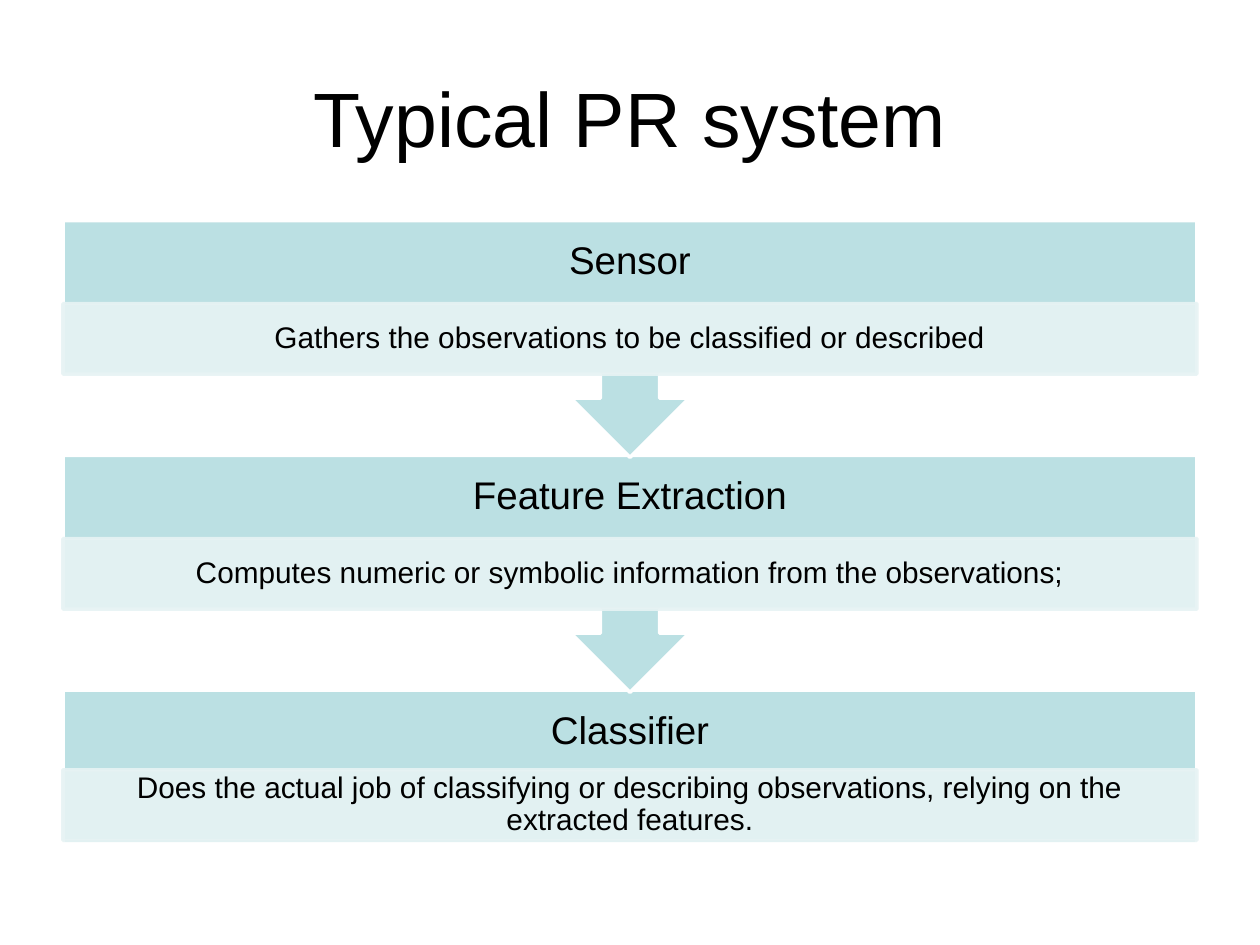
from dataclasses import dataclass

import pptx
import pptx.dml.color
import pptx.enum.shapes
import pptx.enum.text
import pptx.util
from lxml import etree
from pptx.oxml.ns import qn

Inches = pptx.util.Inches
Pt = pptx.util.Pt
SHAPE = pptx.enum.shapes.MSO_SHAPE


@dataclass(frozen=True)
class Theme:
    font: str = "Arial"
    text: str = "000000"
    paper: str = "FFFFFF"
    step: str = "BBE0E3"
    band: str = "E7F3F4"
    title_size: int = 44
    heading_size: int = 22
    detail_size: int = 17
    line_width: int = 2


THEME = Theme()
STEPS = [
    ("Sensor", "Gathers the observations to be classified or described"),
    ("Feature Extraction",
     "Computes numeric or symbolic information from the observations;"),
    ("Classifier",
     "Does the actual job of classifying or describing observations, "
     "relying on the extracted features."),
]


def rgb(value):
    return pptx.dml.color.RGBColor.from_string(value)


def set_text(tf, text, size, margins=(0.1, 0.05), spacing=None):
    """Write one centred paragraph; margins are horizontal and vertical."""
    tf.word_wrap = True
    tf.auto_size = pptx.enum.text.MSO_AUTO_SIZE.NONE
    tf.vertical_anchor = pptx.enum.text.MSO_ANCHOR.MIDDLE
    tf.margin_left = tf.margin_right = Inches(margins[0])
    tf.margin_top = tf.margin_bottom = Inches(margins[1])
    p = tf.paragraphs[0]
    p.alignment = pptx.enum.text.PP_ALIGN.CENTER
    p.line_spacing = spacing
    r = p.add_run()
    r.text = text
    r.font.name = THEME.font
    r.font.size = Pt(size)
    r.font.color.rgb = rgb(THEME.text)


def add_block(shapes, kind, box, fill, line, alpha=None):
    sp = shapes.add_shape(kind, *map(Inches, box))
    sp.shadow.inherit = False
    sp.fill.solid()
    sp.fill.fore_color.rgb = rgb(fill)
    sp.line.color.rgb = rgb(line)
    sp.line.width = Pt(THEME.line_width)
    if alpha is not None:
        for color in sp.fill._xPr.iter(qn("a:srgbClr")):
            etree.SubElement(color, qn("a:alpha")).set("val", str(alpha * 1000))
    return sp


def add_label(shapes, box, text, **style):
    sp = shapes.add_textbox(*map(Inches, box))
    set_text(sp.text_frame, text, spacing=0.9, **style)


def add_title(slide, box, text):
    sp = slide.shapes.title
    sp.left, sp.top, sp.width, sp.height = map(Inches, box)
    set_text(sp.text_frame, text, THEME.title_size)


def add_step(shapes, box, heading, detail, is_last):
    """A heading over a pale detail band; all but the last point downwards."""
    left, top, width, height = box
    heading_height, band_height = 0.66, 0.56
    band_top = top + (0.63 if is_last else heading_height)
    kind = SHAPE.RECTANGLE if is_last else SHAPE.UP_ARROW_CALLOUT
    sp = add_block(shapes, kind, box, THEME.step, THEME.paper)
    if not is_last:
        sp.rotation = 180
    add_label(shapes, (left, top, width, heading_height), heading,
              size=THEME.heading_size, margins=(0.17, 0.17))
    band = (left, band_top, width, band_height)
    add_block(shapes, SHAPE.RECTANGLE, band, THEME.band, THEME.band, alpha=90)
    add_label(shapes, band, detail,
              size=THEME.detail_size, margins=(0.13, 0.02))


def add_process(slide, box, steps):
    """Stack the steps from the bottom up, so each arrow overlaps the next."""
    left, top, width, height = box
    last_height, callout_height = 1.22, 1.88
    last = len(steps) - 1
    pitch = (height - last_height) / last
    shapes = slide.shapes.add_group_shape().shapes
    for i, (heading, detail) in reversed(list(enumerate(steps))):
        step_height = last_height if i == last else callout_height
        add_step(shapes, (left, top + i * pitch, width, step_height),
                 heading, detail, i == last)


def main():
    prs = pptx.Presentation()
    prs.slide_width, prs.slide_height = Inches(10), Inches(7.5)
    slide = prs.slides.add_slide(prs.slide_layouts.get_by_name("Title Only"))
    slide.background.fill.solid()
    slide.background.fill.fore_color.rgb = rgb(THEME.paper)
    add_title(slide, (0.5, 0.3, 9, 1.25), "Typical PR system")
    add_process(slide, (0.5, 1.75, 9, 4.95), STEPS)
    prs.save("out.pptx")


if __name__ == "__main__":
    main()
